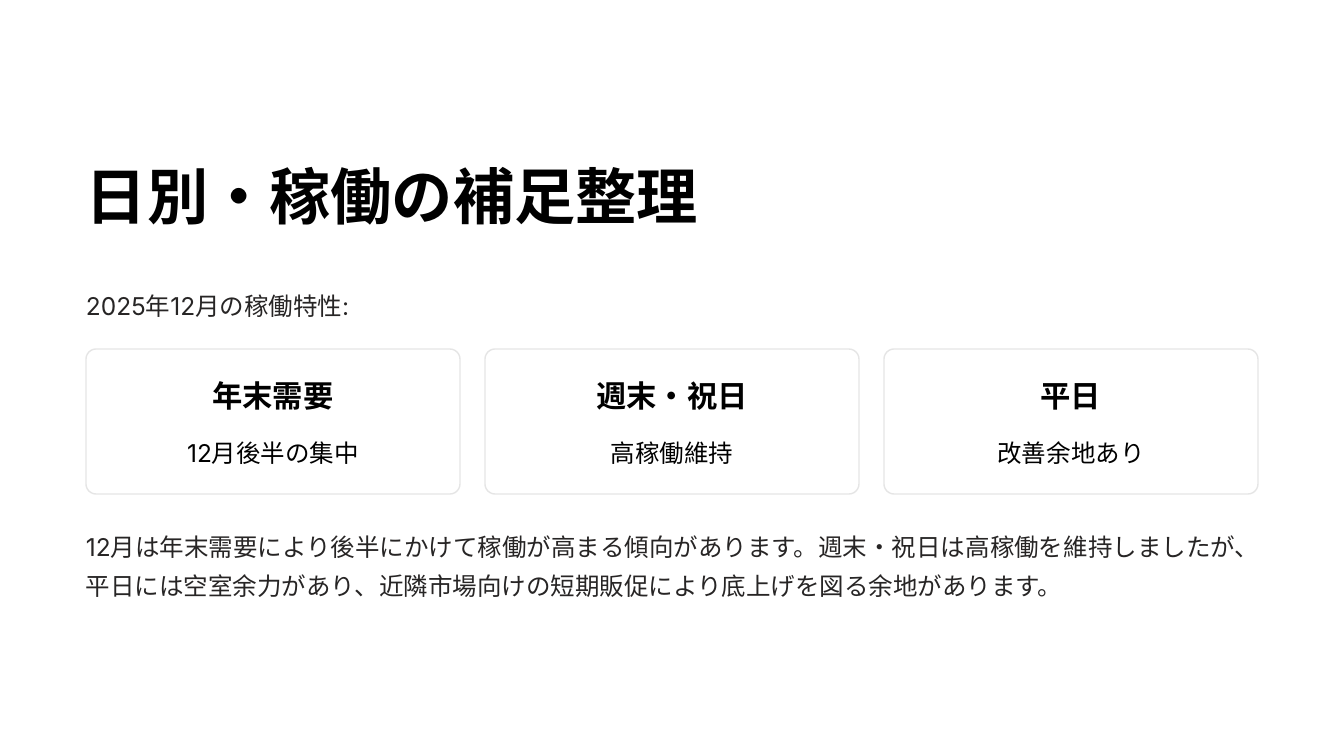
from dataclasses import dataclass

from pptx import Presentation
from pptx.dml.color import RGBColor
from pptx.enum.shapes import MSO_SHAPE
from pptx.enum.text import MSO_ANCHOR, MSO_AUTO_SIZE, PP_ALIGN
from pptx.util import Emu, Pt

ROUNDED = MSO_SHAPE.ROUNDED_RECTANGLE
LEFT, CENTER = PP_ALIGN.LEFT, PP_ALIGN.CENTER
TOP = MSO_ANCHOR.TOP
NO_FIT = MSO_AUTO_SIZE.NONE

PX_PER_INCH = 84
COLORS = {"white": "FFFFFF", "black": "000000", "body": "272525", "border": "E5E5E5"}

MARGIN = 86
CONTENT_WIDTH = 1172
CARD_TOP, CARD_WIDTH, CARD_HEIGHT, CARD_GAP = 349, 374, 145, 25
HEADING_INSET, DETAIL_INSET = 33, 26


@dataclass(frozen=True)
class Area:
    left: int
    top: int
    width: int
    height: int


@dataclass(frozen=True)
class TextStyle:
    size: float
    line: float
    color: str
    bold: bool = False
    align: PP_ALIGN = LEFT
    wrap: bool = False


@dataclass(frozen=True)
class Card:
    heading: str
    detail: str


TITLE = TextStyle(52.5, 66, "black", bold=True)
INTRO = TextStyle(21, 33.5, "body")
SUMMARY = TextStyle(21, 33.5, "body", wrap=True)
HEADING = TextStyle(26, 33, "black", bold=True, align=CENTER)
DETAIL = TextStyle(21, 33.5, "black", align=CENTER)

CARDS = [
    Card("年末需要", "12月後半の集中"),
    Card("週末・祝日", "高稼働維持"),
    Card("平日", "改善余地あり"),
]


def px(length: int) -> Emu:
    return Emu(round(length * 914400 / PX_PER_INCH))


def color(name: str) -> RGBColor:
    return RGBColor.from_string(COLORS[name])


def bounds(area: Area) -> tuple:
    return px(area.left), px(area.top), px(area.width), px(area.height)


def apply(target, values: dict) -> None:
    for name, value in values.items():
        setattr(target, name, value)


def write(box, text: str, style: TextStyle) -> None:
    frame = box.text_frame
    frame.text = text
    apply(frame, {
        "margin_left": 0, "margin_top": 0, "margin_right": 0, "margin_bottom": 0,
        "auto_size": NO_FIT, "word_wrap": style.wrap, "vertical_anchor": TOP,
    })
    para = frame.paragraphs[0]
    apply(para, {"alignment": style.align, "line_spacing": Pt(style.line)})
    font = para.runs[0].font
    apply(font, {"name": "Inter", "size": Pt(style.size), "bold": style.bold})
    font.color.rgb = color(style.color)


def add_text(page, area: Area, text: str, style: TextStyle) -> None:
    write(page.shapes.add_textbox(*bounds(area)), text, style)


def add_title(page, area: Area, text: str) -> None:
    title = page.shapes.title
    apply(title, dict(zip(("left", "top", "width", "height"), bounds(area))))
    write(title, text, TITLE)


def add_card(page, left: int, card: Card) -> None:
    area = Area(left, CARD_TOP, CARD_WIDTH, CARD_HEIGHT)
    panel = page.shapes.add_shape(ROUNDED, *bounds(area))
    panel.shadow.inherit = False
    panel.adjustments[0] = 0.07
    panel.fill.solid()
    panel.fill.fore_color.rgb = color("white")
    panel.line.color.rgb = color("border")
    panel.line.width = Pt(1.2)
    for inset, offset, text, style in (
        (HEADING_INSET, 26, card.heading, HEADING),
        (DETAIL_INSET, 79, card.detail, DETAIL),
    ):
        row = Area(left + inset, CARD_TOP + offset, CARD_WIDTH - 2 * inset, 39)
        add_text(page, row, text, style)


def main() -> None:
    deck = Presentation()
    deck.slide_width, deck.slide_height = px(1344), px(756)
    page = deck.slides.add_slide(deck.slide_layouts.get_by_name("Title Only"))
    page.background.fill.solid()
    page.background.fill.fore_color.rgb = color("white")

    add_title(page, Area(MARGIN, 155, 617, 77), "日別・稼働の補足整理")
    add_text(page, Area(MARGIN, 281, CONTENT_WIDTH, 39), "2025年12月の稼働特性:", INTRO)
    for index, card in enumerate(CARDS):
        add_card(page, MARGIN + index * (CARD_WIDTH + CARD_GAP), card)
    add_text(
        page,
        Area(MARGIN, 522, CONTENT_WIDTH, 79),
        "12月は年末需要により後半にかけて稼働が高まる傾向があります。"
        "週末・祝日は高稼働を維持しましたが、平日には空室余力があり、"
        "近隣市場向けの短期販促により底上げを図る余地があります。",
        SUMMARY,
    )
    deck.save("out.pptx")


if __name__ == "__main__":
    main()
